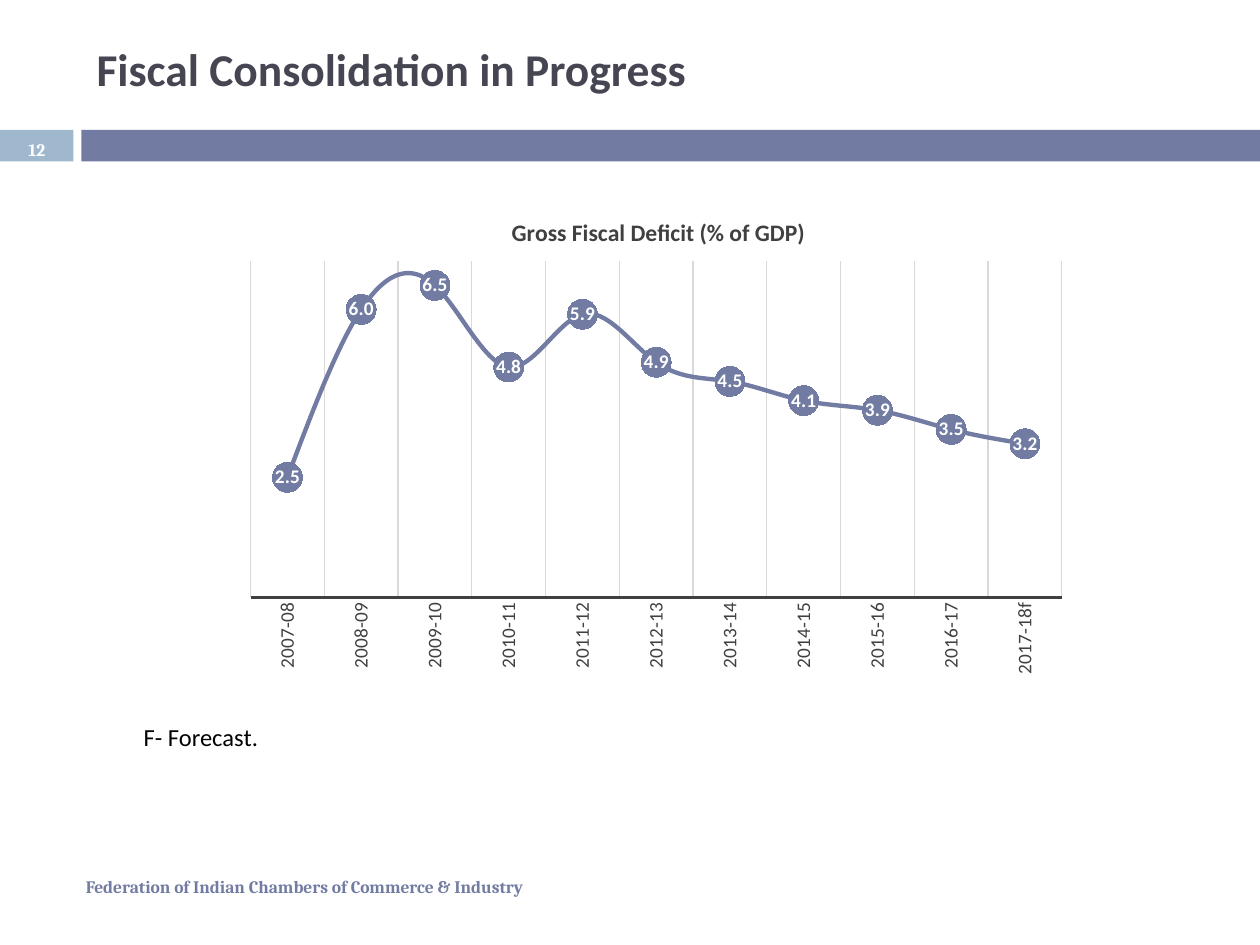
from dataclasses import dataclass

from lxml import etree
from pptx import Presentation
from pptx import util as u
from pptx.chart.data import CategoryChartData
from pptx.dml.color import RGBColor
from pptx.enum import chart as ch, shapes, text
from pptx.oxml.ns import qn


@dataclass(frozen=True)
class Theme:
    head: str = "Calibri"
    note: str = "Cambria"
    main: str = "727CA3"
    pale: str = "9FB8CD"
    ink: str = "464653"
    dark: str = "404040"
    grid: str = "D9D9D9"
    white: str = "FFFFFF"
    black: str = "000000"
    title: float = 26
    body: float = 14
    label: float = 13.5
    tick: float = 11
    small: float = 10


YEARS = [f"20{y:02}-{y + 1:02}" for y in range(7, 17)] + ["2017-18f"]
RATES = [2.5, 6, 6.5, 4.8, 5.9, 4.9, 4.5, 4.1, 3.9, 3.5, 3.2]


def apply(item, vals):
    for name, val in vals.items():
        setattr(item, name, val)


def ink(font, face, size, color, bold=False):
    apply(font, dict(name=face, size=u.Pt(size), bold=bold))
    font.color.rgb = RGBColor.from_string(color)


def fill(item, color):
    item.fill.solid()
    item.fill.fore_color.rgb = RGBColor.from_string(color)


def stroke(line, color, width):
    line.color.rgb = RGBColor.from_string(color)
    line.width = u.Pt(width)


def place(node, **vals):
    """Give a chart part a fixed place, in fractions of the chart."""
    lay = node.find(qn("c:layout"))
    if lay is None:
        lay = etree.Element(qn("c:layout"))
        spot = node.find(qn("c:tx"))
        if spot is None:
            node.insert(0, lay)
        else:
            spot.addnext(lay)
    box = etree.SubElement(lay, qn("c:manualLayout"))
    if "w" in vals:
        etree.SubElement(box, qn("c:layoutTarget"), val="inner")
    for key in ("x", "y"):
        etree.SubElement(box, qn(f"c:{key}Mode"), val="edge")
    for key, val in vals.items():
        etree.SubElement(box, qn(f"c:{key}"), val=str(val))


class Deck:
    def __init__(self, theme):
        self.look = theme
        self.prs = Presentation()
        apply(self.prs, dict(slide_width=u.Pt(720), slide_height=u.Pt(540)))
        self.page = self.prs.slides.add_slide(self.prs.slide_layouts[5])

    def bar(self, box, color):
        rect = self.page.shapes.add_shape(
            shapes.MSO_SHAPE.RECTANGLE, *map(u.Pt, box))
        rect.shadow.inherit = False
        fill(rect, color)
        rect.line.fill.background()

    def put(self, frame, words, font, anchor, align):
        apply(frame, dict(word_wrap=True, vertical_anchor=anchor,
                          auto_size=text.MSO_AUTO_SIZE.NONE))
        para = frame.paragraphs[0]
        para.alignment = align
        run = para.add_run()
        run.text = words
        ink(run.font, *font)

    def title(self, box, words):
        shape = self.page.shapes.title
        apply(shape, dict(zip(("left", "top", "width", "height"),
                              map(u.Pt, box))))
        font = (self.look.head, self.look.title, self.look.ink, True)
        self.put(shape.text_frame, words, font,
                 text.MSO_ANCHOR.MIDDLE, text.PP_ALIGN.LEFT)

    def label(self, box, words, font, anchor=text.MSO_ANCHOR.MIDDLE,
              align=text.PP_ALIGN.LEFT):
        shape = self.page.shapes.add_textbox(*map(u.Pt, box))
        self.put(shape.text_frame, words, font, anchor, align)

    def chart(self, box, words, cats, vals):
        look = self.look
        data = CategoryChartData(number_format="0.0")
        data.categories = cats
        data.add_series("Series 1", vals)
        chart = self.page.shapes.add_chart(
            ch.XL_CHART_TYPE.LINE_MARKERS, *map(u.Pt, box), data).chart
        ink(chart.font, look.head, look.tick, look.black)
        apply(chart, dict(has_legend=False, has_title=True))
        head = chart.chart_title
        head.text_frame.text = words
        ink(head.text_frame.paragraphs[0].runs[0].font,
            look.head, look.label, look.dark, True)
        place(head._element, x=0.325, y=0.045)
        place(chart._chartSpace.chart.plotArea,
              x=0.023, y=0.141, w=0.954, h=0.653)
        self.axes(chart)
        self.series(chart.plots[0])

    def axes(self, chart):
        look, none = self.look, ch.XL_TICK_MARK.NONE
        axis = chart.category_axis
        apply(axis, dict(major_tick_mark=none, minor_tick_mark=none,
                         has_major_gridlines=True))
        ink(axis.tick_labels.font, look.head, look.tick, look.dark)
        axis._element.find(qn("c:txPr")).find(qn("a:bodyPr")).set(
            "rot", "-5400000")
        stroke(axis.format.line, look.dark, 1.5)
        stroke(axis.major_gridlines.format.line, look.grid, 0.75)
        apply(chart.value_axis, dict(minimum_scale=0, maximum_scale=7,
                                     has_major_gridlines=False, visible=False))

    def series(self, plot):
        look = self.look
        plot.vary_by_categories = False
        line = plot.series[0]
        line.smooth = True
        stroke(line.format.line, look.main, 2.5)
        apply(line.marker, dict(style=ch.XL_MARKER_STYLE.CIRCLE, size=17))
        fill(line.marker.format, look.main)
        stroke(line.marker.format.line, look.main, 0.75)
        tags = line.data_labels
        apply(tags, dict(show_value=True, number_format="0.0",
                         number_format_is_linked=False,
                         position=ch.XL_LABEL_POSITION.CENTER))
        ink(tags.font, look.head, look.tick, look.white, True)


def main():
    look = Theme()
    deck = Deck(look)
    deck.bar((0, 74.2, 42, 18), look.pale)
    deck.bar((46.5, 74.2, 673.5, 18), look.main)
    deck.label((42, 492, 462, 29),
               "Federation of Indian Chambers of Commerce & Industry",
               (look.note, look.small, look.main, True))
    deck.title((48, 6, 642, 66), "Fiscal Consolidation in Progress")
    deck.label((0, 75.6, 42, 19.4), "12",
               (look.note, look.small, look.white, True),
               align=text.PP_ALIGN.CENTER)
    deck.chart((132, 108, 486, 294), "Gross Fiscal Deficit (% of GDP)",
               YEARS, RATES)
    deck.label((75, 409, 588, 46), "F- Forecast.",
               (look.head, look.body, look.black), text.MSO_ANCHOR.TOP)
    deck.prs.save("out.pptx")


if __name__ == "__main__":
    main()
